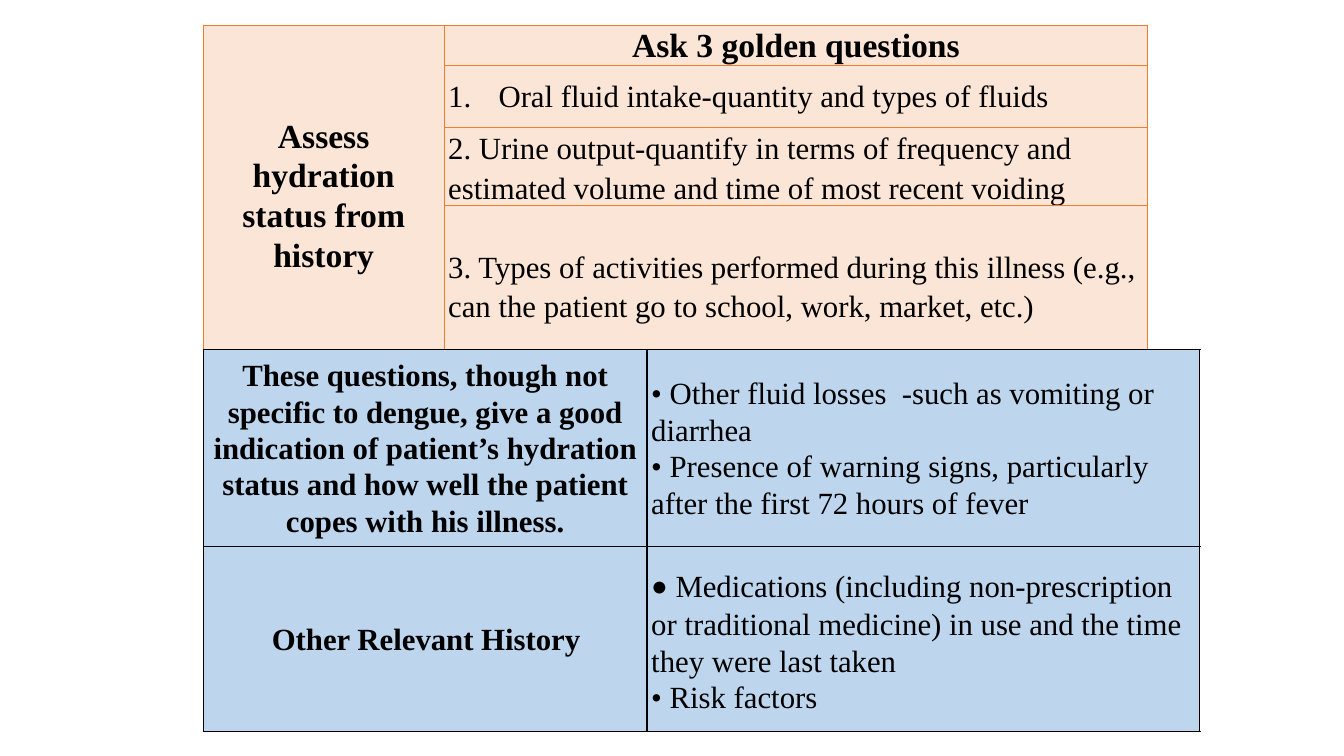
from dataclasses import dataclass

import lxml.etree
import pptx
import pptx.dml.color
import pptx.enum.text
import pptx.oxml.ns
import pptx.util


@dataclass(frozen=True)
class Theme:
    font: str = "Times New Roman"
    marker_font: str = "Calibri"
    heading_size: float = 24
    body_size: float = 22
    text: str = "000000"
    peach: str = "FBE5D6"
    orange: str = "ED7D31"
    blue: str = "BDD6EE"
    black: str = "000000"


THEME = Theme()


@dataclass(frozen=True)
class Line:
    text: str
    size: float = THEME.body_size
    bold: bool = False
    centered: bool = False
    spacing: float = 1.07
    left: float = 0
    numbered: bool = False
    marker: str = ""


@dataclass(frozen=True)
class Grid:
    left: float
    top: float
    columns: list[float]
    rows: list[float]
    fill: str
    border: str
    border_width: float
    cells: list[list[list[Line]]]
    first_column_merged: bool = False


HYDRATION = Grid(
    left=145.2, top=18, columns=[172, 502.6], rows=[26.6, 44.6, 54, 82.8],
    fill=THEME.peach, border=THEME.orange, border_width=0.5,
    first_column_merged=True,
    cells=[
        [[Line("Assess hydration status from history", THEME.heading_size, bold=True, centered=True)],
         [Line("Ask 3 golden questions", THEME.heading_size, bold=True, centered=True)]],
        [[], [Line("Oral fluid intake-quantity and types of fluids", left=36, numbered=True)]],
        [[], [Line("2. Urine output-quantify in terms of frequency and estimated volume "
                   "and time of most recent voiding", spacing=1.15)]],
        [[], [Line("3. Types of activities performed during this illness (e.g., can the patient "
                   "go to school, work, market, etc.)", spacing=1.15)]],
    ],
)

OTHER_HISTORY = Grid(
    left=145.2, top=249.8, columns=[317, 394.9], rows=[140.4, 132.5],
    fill=THEME.blue, border=THEME.black, border_width=1,
    cells=[
        [[Line("These questions, though not specific to dengue, give a good indication of patient’s "
               "hydration status and how well the patient copes with his illness.",
               bold=True, centered=True)],
         [Line("• Other fluid losses  -such as vomiting or diarrhea"),
          Line("• Presence of warning signs, particularly after the first 72 hours of fever")]],
        [[Line("Other Relevant History", bold=True, left=46)],
         [Line("Medications (including non-prescription or traditional medicine) in use "
               "and the time they were last taken", marker="• "),
          Line("• Risk factors")]],
    ],
)


def write_line(paragraph: pptx.text.text._Paragraph, line: Line) -> None:
    paragraph.line_spacing = line.spacing
    if line.centered:
        paragraph.alignment = pptx.enum.text.PP_ALIGN.CENTER
    properties = paragraph._p.get_or_add_pPr()
    margin = pptx.util.Pt(line.left)
    properties.set("marL", str(margin))
    properties.set("indent", str(-margin if line.numbered else 0))
    if line.numbered:
        lxml.etree.SubElement(properties, pptx.oxml.ns.qn("a:buAutoNum"), type="arabicPeriod")

    paragraph.font.name = THEME.font
    paragraph.font.size = pptx.util.Pt(line.size)
    paragraph.font.bold = line.bold
    paragraph.font.color.rgb = pptx.dml.color.RGBColor.from_string(THEME.text)
    if line.marker:
        marker = paragraph.add_run()
        marker.text = line.marker
        marker.font.name = THEME.marker_font
        marker.font.size = pptx.util.Pt(THEME.heading_size)
    paragraph.add_run().text = line.text


def set_borders(cell: pptx.table._Cell, color: str, width: float) -> None:
    """Draw all four sides; the border elements must precede the cell fill."""
    properties = cell._tc.get_or_add_tcPr()
    for position, side in enumerate(("a:lnL", "a:lnR", "a:lnT", "a:lnB")):
        border = lxml.etree.Element(pptx.oxml.ns.qn(side), w=str(pptx.util.Pt(width)))
        fill = lxml.etree.SubElement(border, pptx.oxml.ns.qn("a:solidFill"))
        lxml.etree.SubElement(fill, pptx.oxml.ns.qn("a:srgbClr"), val=color)
        properties.insert(position, border)


def fill_cell(cell: pptx.table._Cell, lines: list[Line], grid: Grid) -> None:
    cell.vertical_anchor = pptx.enum.text.MSO_ANCHOR.MIDDLE
    cell.margin_left = cell.margin_right = pptx.util.Pt(3)
    cell.margin_top = cell.margin_bottom = pptx.util.Pt(0)
    cell.fill.solid()
    cell.fill.fore_color.rgb = pptx.dml.color.RGBColor.from_string(grid.fill)
    set_borders(cell, grid.border, grid.border_width)
    for index, line in enumerate(lines):
        frame = cell.text_frame
        write_line(frame.add_paragraph() if index else frame.paragraphs[0], line)


def draw_grid(slide: pptx.slide.Slide, grid: Grid) -> None:
    table = slide.shapes.add_table(
        len(grid.rows), len(grid.columns),
        pptx.util.Pt(grid.left), pptx.util.Pt(grid.top),
        pptx.util.Pt(sum(grid.columns)), pptx.util.Pt(sum(grid.rows)),
    ).table
    table.first_row = table.horz_banding = False
    for column, width in zip(table.columns, grid.columns):
        column.width = pptx.util.Pt(width)
    for row, height in zip(table.rows, grid.rows):
        row.height = pptx.util.Pt(height)
    if grid.first_column_merged:
        table.cell(0, 0).merge(table.cell(len(grid.rows) - 1, 0))
    for row, row_cells in zip(table.rows, grid.cells):
        for cell, lines in zip(row.cells, row_cells):
            fill_cell(cell, lines, grid)


def main() -> None:
    presentation = pptx.Presentation()
    presentation.slide_width = pptx.util.Pt(960)
    presentation.slide_height = pptx.util.Pt(540)
    slide = presentation.slides.add_slide(presentation.slide_layouts[6])
    for grid in (HYDRATION, OTHER_HISTORY):
        draw_grid(slide, grid)
    presentation.save("out.pptx")


if __name__ == "__main__":
    main()
